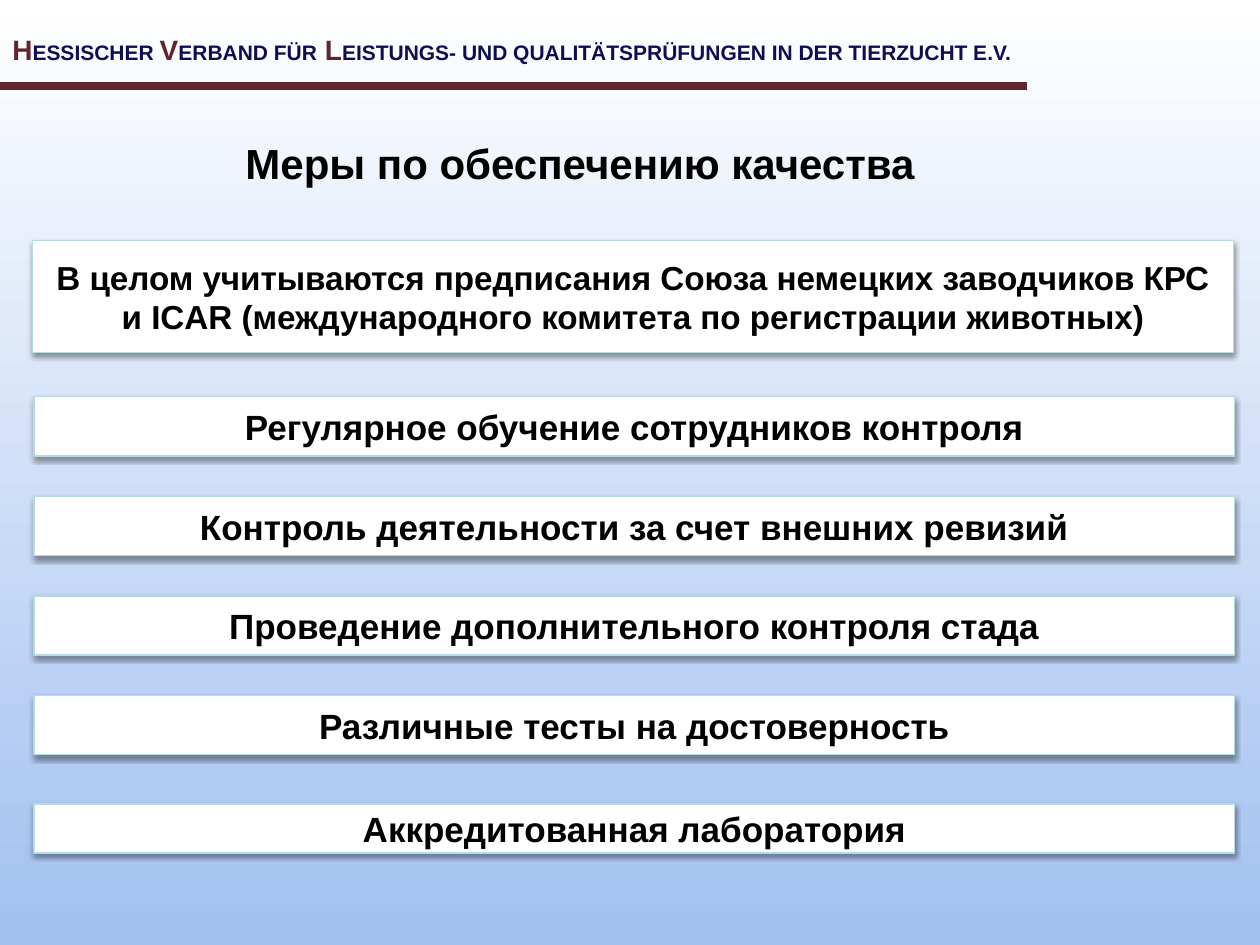
"""Build the slide on quality assurance measures in milk recording."""
from dataclasses import dataclass

from lxml import etree
from pptx import Presentation
from pptx.dml.color import RGBColor
from pptx.enum.shapes import MSO_CONNECTOR, MSO_SHAPE
from pptx.enum.text import MSO_ANCHOR, MSO_AUTO_SIZE, PP_ALIGN
from pptx.oxml import parse_xml
from pptx.oxml.ns import nsdecls, qn
from pptx.util import Inches, Pt

RECT, STRAIGHT = MSO_SHAPE.RECTANGLE, MSO_CONNECTOR.STRAIGHT
CENTER, LEFT = PP_ALIGN.CENTER, PP_ALIGN.LEFT
MIDDLE, GROW = MSO_ANCHOR.MIDDLE, MSO_AUTO_SIZE.SHAPE_TO_FIT_TEXT
WIDTH, HEIGHT = Inches(10), Inches(7.5)
COLUMNS, ROWS = 100, 75


@dataclass(frozen=True)
class Theme:
    font: str = "Arial"
    ink: str = "000000"
    white: str = "FFFFFF"
    sky: str = "A2C0F0"
    maroon: str = "62242E"
    navy: str = "0E0E52"
    edge: str = "B6DCDF"
    initial: float = 16
    small: float = 12
    title: float = 24
    lead: float = 19
    body: float = 20


@dataclass(frozen=True)
class Area:
    col: float
    row: float
    cols: float
    rows: float

    def emu(self) -> tuple[int, int, int, int]:
        return x(self.col), y(self.row), x(self.cols), y(self.rows)


@dataclass(frozen=True)
class Span:
    text: str
    size: float
    color: str


@dataclass(frozen=True)
class Measure:
    area: Area
    lines: tuple[str, ...]
    size: float


THEME = Theme()
BAR_COL, BAR_COLS, BAR_ROWS = 2.7, 95.3, 4.7
FIRST_ROW, ROW_STEP = 31.5, 7.9
TOPICS = (
    "Регулярное обучение сотрудников контроля",
    "Контроль деятельности за счет внешних ревизий",
    "Проведение дополнительного контроля стада",
    "Различные тесты на достоверность",
)
MEASURES = (
    Measure(Area(2.6, 19.1, BAR_COLS, 8.9), (
        "В целом учитываются предписания Союза немецких заводчиков КРС",
        "и ICAR (международного комитета по регистрации животных)",
    ), THEME.lead),
    *(Measure(Area(BAR_COL, FIRST_ROW + i * ROW_STEP, BAR_COLS, BAR_ROWS), (topic,), THEME.body)
      for i, topic in enumerate(TOPICS)),
    Measure(Area(BAR_COL, 63.8, BAR_COLS, 3.9), ("Аккредитованная лаборатория",), THEME.body),
)
HEADER = (
    Span("H", THEME.initial, THEME.maroon),
    Span("ESSISCHER ", THEME.small, THEME.navy),
    Span("V", THEME.initial, THEME.maroon),
    Span("ERBAND FÜR", THEME.small, THEME.navy),
    Span(" ", THEME.initial, THEME.ink),
    Span("L", THEME.initial, THEME.maroon),
    Span("EISTUNGS- UND QUALITÄTSPRÜFUNGEN IN DER TIERZUCHT E.V.", THEME.small, THEME.navy),
)
TITLE = (Span("Меры по обеспечению качества", THEME.title, THEME.ink),)


def x(cols: float) -> int:
    """Convert grid columns to a length."""
    return round(WIDTH * cols / COLUMNS)


def y(rows: float) -> int:
    """Convert grid rows to a length."""
    return round(HEIGHT * rows / ROWS)


def rgb(color: str) -> RGBColor:
    """Turn a hex string into a colour."""
    return RGBColor.from_string(color)


def write(p, spans: tuple[Span, ...], align) -> None:
    """Fill a paragraph with formatted runs."""
    p.alignment = align
    for span in spans:
        r = p.add_run()
        r.text = span.text
        formats = {"name": THEME.font, "size": Pt(span.size), "bold": True}
        for key, value in formats.items():
            setattr(r.font, key, value)
        r.font.color.rgb = rgb(span.color)


def add_text(s, area: Area, spans: tuple[Span, ...]) -> None:
    """Add a one-paragraph text box."""
    tf = s.shapes.add_textbox(*area.emu()).text_frame
    for key, value in {"word_wrap": True, "auto_size": GROW}.items():
        setattr(tf, key, value)
    write(tf.paragraphs[0], spans, LEFT)


def add_measure(s, measure: Measure) -> None:
    """Add a white bar with a soft shadow and centred text."""
    sp = s.shapes.add_shape(RECT, *measure.area.emu())
    sp.fill.solid()
    sp.fill.fore_color.rgb = rgb(THEME.white)
    sp.line.color.rgb = rgb(THEME.edge)
    sp.line.width = Pt(0.75)
    sp.shadow.inherit = False
    sp.element.spPr.find(qn("a:effectLst")).append(parse_xml(
        f'<a:outerShdw {nsdecls("a")} blurRad="{Pt(3.1)}" dist="{Pt(1.6)}" dir="5400000" '
        f'rotWithShape="0"><a:srgbClr val="{THEME.ink}"><a:alpha val="38000"/>'
        '</a:srgbClr></a:outerShdw>'))
    tf = sp.text_frame
    for key, value in {"word_wrap": False, "vertical_anchor": MIDDLE}.items():
        setattr(tf, key, value)
    for i, line in enumerate(measure.lines):
        p = tf.add_paragraph() if i else tf.paragraphs[0]
        write(p, (Span(line, measure.size, THEME.ink),), CENTER)


def add_rule(s, row: float, cols: float) -> None:
    """Add the thick line under the header."""
    rule = s.shapes.add_connector(STRAIGHT, 0, y(row), x(cols), y(row))
    rule.line.color.rgb = rgb(THEME.maroon)
    rule.line.width = Pt(4.5)
    etree.SubElement(rule.element.spPr, qn("a:effectLst"))


def paint_background(s) -> None:
    """Fade the background from white at the top to blue."""
    fill = s.background.fill
    fill.gradient()
    fill.gradient_angle = 270
    for stop, color in zip(fill.gradient_stops, (THEME.white, THEME.sky)):
        stop.color.rgb = rgb(color)


def main() -> None:
    """Build and save the slide."""
    prs = Presentation()
    prs.slide_width, prs.slide_height = WIDTH, HEIGHT
    s = prs.slides.add_slide(prs.slide_layouts[6])
    paint_background(s)
    add_text(s, Area(0, 2.1, 81.7, 3.7), HEADER)
    add_rule(s, 6.8, 81.5)
    for measure in MEASURES:
        add_measure(s, measure)
    add_text(s, Area(18.5, 10.4, 58.3, 5), TITLE)
    prs.save("out.pptx")


if __name__ == "__main__":
    main()
